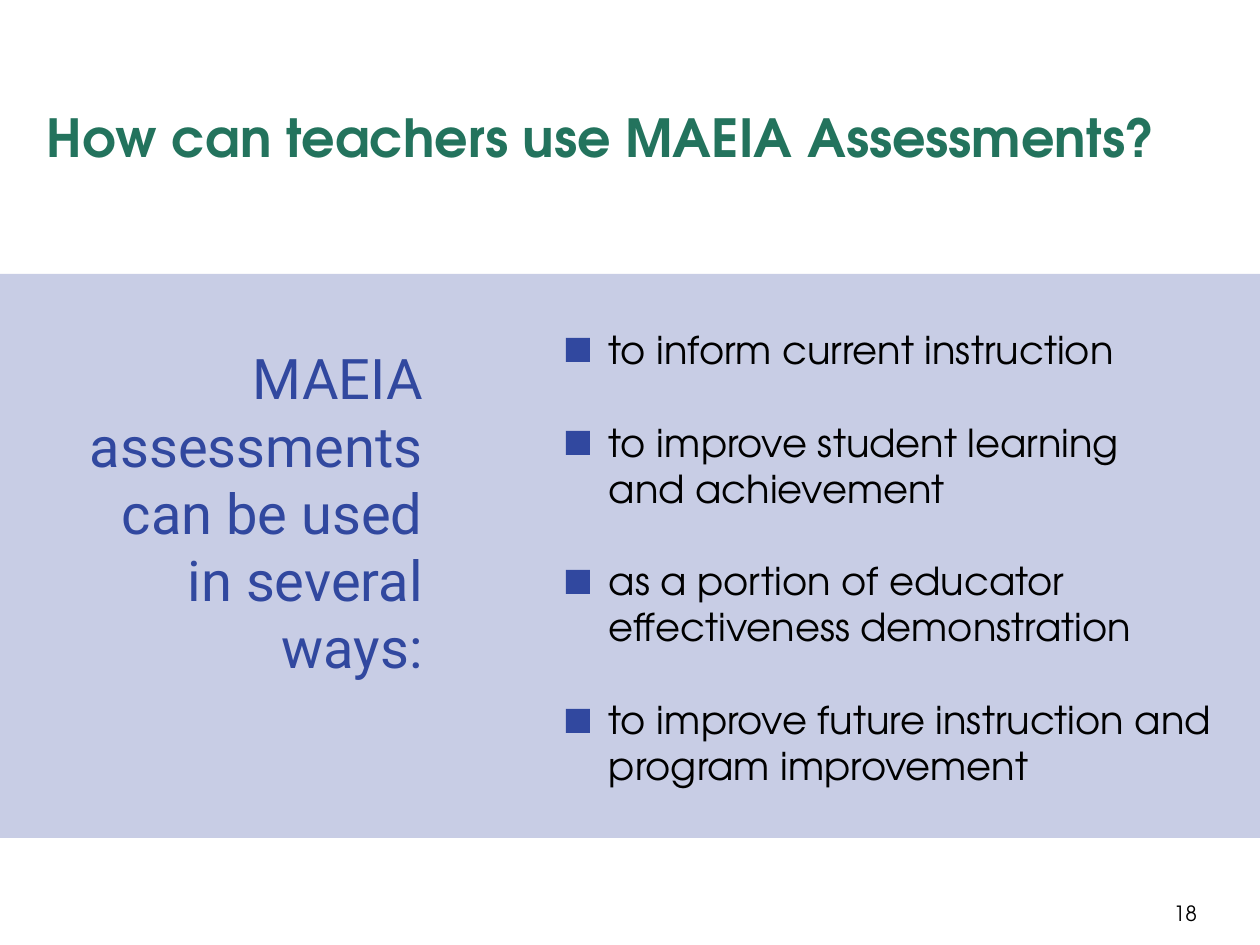
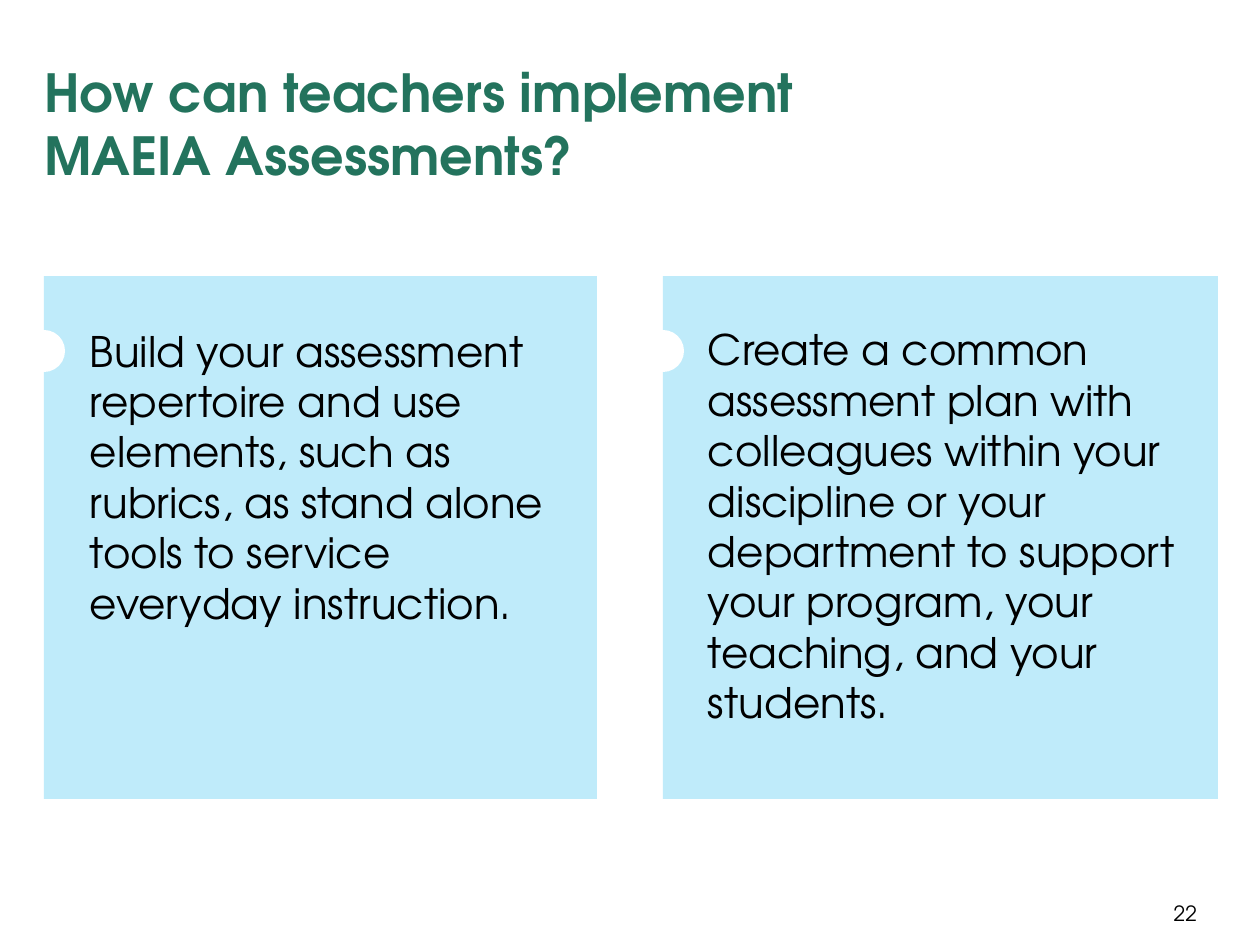
from pptx import Presentation
from pptx import util as u
from pptx.dml.color import RGBColor
from pptx.enum import shapes, text

SCALE = 914400 // 126
COLORS = {
    "title": "23735D",
    "accent": "31489F",
    "band": "C8CDE5",
    "card": "BFEBFA",
    "notch": "FFFFFF",
    "body": "000000",
}
FONT = "TeX Gyre Adventor"
HEADING_FONT = "Roboto"
LEFT, RIGHT = text.PP_ALIGN.LEFT, text.PP_ALIGN.RIGHT
TOP, BOTTOM = text.MSO_ANCHOR.TOP, text.MSO_ANCHOR.BOTTOM
RECTANGLE, OVAL = shapes.MSO_SHAPE.RECTANGLE, shapes.MSO_SHAPE.OVAL
DEFAULT_INSETS = (13, 6, 13, 6)

USES = [
    "to inform current instruction",
    "to improve student learning\nand achievement",
    "as a portion of educator\neffectiveness demonstration",
    "to improve future instruction and program improvement",
]
USE_LINES = [0, 2, 5, 8]
CARDS = [
    (44, 553, 77, 319, "Build your assessment repertoire and use elements, such as "
     "rubrics, as stand alone tools to service everyday instruction."),
    (663, 555, 695, 318, "Create a common assessment plan with colleagues within your "
     "discipline or your department to support your program, your teaching, "
     "and your students."),
]


def px(length):
    return u.Emu(length * SCALE)


def write(frame, content, size=24, color="body", font=FONT, bold=False, align=LEFT,
          anchor=TOP, insets=DEFAULT_INSETS, gap=0):
    frame.word_wrap = True
    frame.auto_size = text.MSO_AUTO_SIZE.NONE
    frame.vertical_anchor = anchor
    (frame.margin_left, frame.margin_top,
     frame.margin_right, frame.margin_bottom) = map(px, insets)
    items = [content] if isinstance(content, str) else content
    for index, item in enumerate(items):
        para = frame.add_paragraph() if index else frame.paragraphs[0]
        para.text = item
        para.alignment = align
        para.space_before = u.Pt(gap if index else 0)
        for span in para.runs:
            span.font.size = u.Pt(size)
            span.font.name = font
            span.font.bold = bold
            span.font.color.rgb = RGBColor.from_string(COLORS[color])


def add_text(page, bounds, content, **style):
    box = page.shapes.add_textbox(*map(px, bounds))
    write(box.text_frame, content, **style)


def add_block(page, kind, bounds, color):
    block = page.shapes.add_shape(kind, *map(px, bounds))
    block.shadow.inherit = False
    block.fill.solid()
    block.fill.fore_color.rgb = RGBColor.from_string(COLORS[color])
    block.line.fill.background()


def add_page(deck, title, bounds, number):
    page = deck.slides.add_slide(deck.slide_layouts[5])
    heading = page.shapes.title
    heading.left, heading.top, heading.width, heading.height = map(px, bounds)
    write(heading.text_frame, title, size=30, color="title", bold=True,
          anchor=BOTTOM, insets=(0, 6, 0, 0))
    add_text(page, (1092, 876, 105, 50), number, size=12, align=RIGHT,
             anchor=BOTTOM, insets=(0, 0, 0, 0))
    return page


def add_uses_page(deck):
    page = add_page(deck, "How can teachers use MAEIA Assessments?",
                    (47, 10, 1278, 158), "18")
    add_block(page, RECTANGLE, (0, 274, 1260, 564), "band")
    add_text(page, (63, 338, 373, 352), "MAEIA assessments can be used in several ways:",
             size=32, color="accent", font=HEADING_FONT, align=RIGHT)
    add_text(page, (596, 320, 630, 467), USES, size=22, gap=26.5)
    for line in USE_LINES:
        add_block(page, RECTANGLE, (566, round(338 + 46.4 * line), 24, 24), "accent")


def add_implementation_page(deck):
    page = add_page(deck, "How can teachers implement\nMAEIA Assessments?",
                    (44, 28, 1134, 158), "22")
    for left, width, text_left, text_top, content in CARDS:
        add_block(page, RECTANGLE, (left, 276, width, 523), "card")
        add_text(page, (text_left, text_top, 510, 420), content)
        add_block(page, OVAL, (left - 21, 330, 42, 42), "notch")


def main():
    deck = Presentation()
    deck.slide_width, deck.slide_height = px(1260), px(945)
    add_uses_page(deck)
    add_implementation_page(deck)
    deck.save("out.pptx")


if __name__ == "__main__":
    main()
